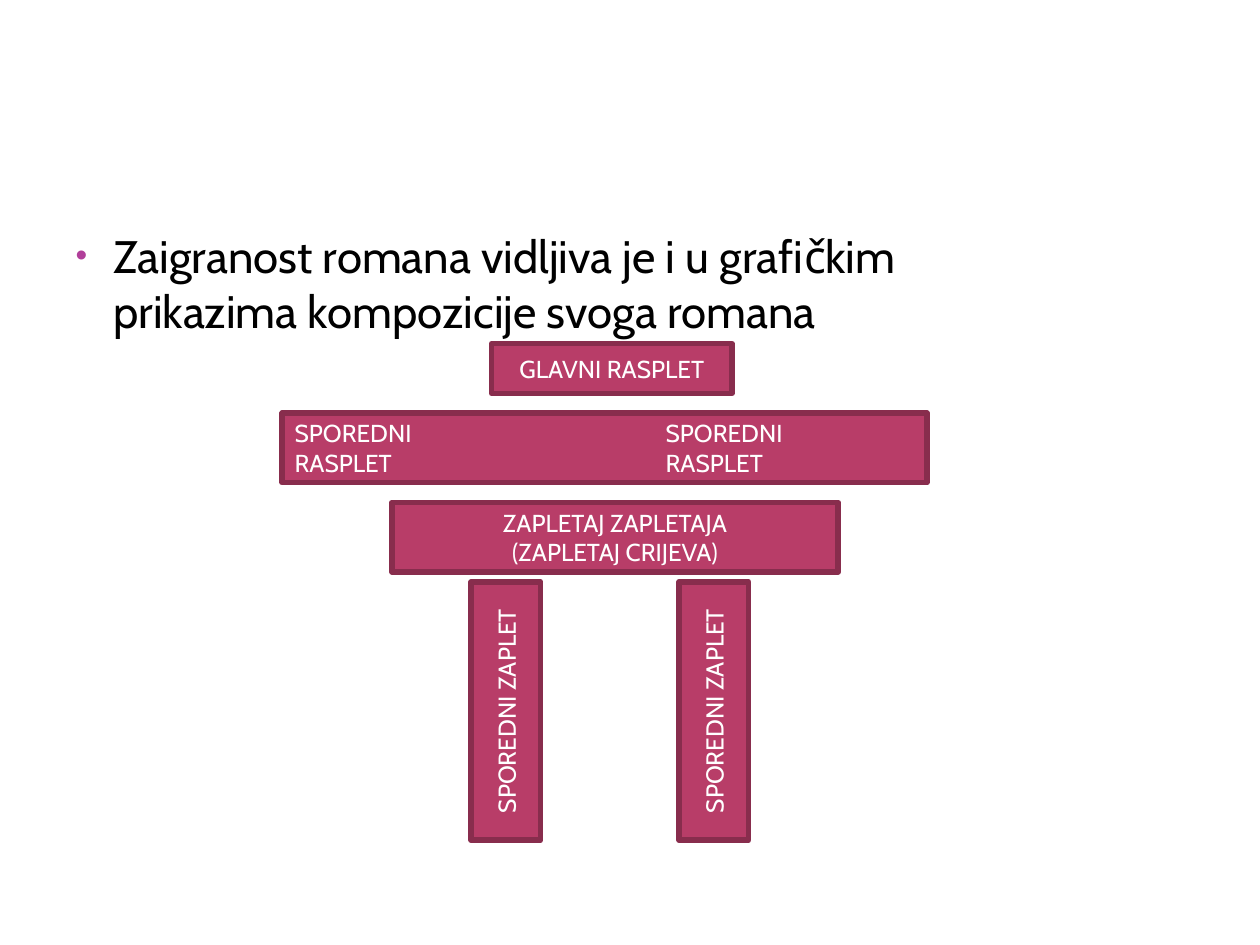
from lxml.etree import SubElement
from pptx import Presentation
from pptx.dml.color import RGBColor
from pptx.enum.shapes import MSO_SHAPE
from pptx.enum.text import MSO_ANCHOR, PP_ALIGN
from pptx.oxml.ns import qn
from pptx.util import Cm, Pt

FONT = "Cabin"
BLACK = RGBColor(0x00, 0x00, 0x00)
WHITE = RGBColor(0xFF, 0xFF, 0xFF)
RASPBERRY = RGBColor(0xB8, 0x3D, 0x68)
DARK_RASPBERRY = RGBColor(0x88, 0x2D, 0x4D)
BULLET_COLOR = RGBColor(0xB1, 0x3F, 0x9A)

STATEMENT = "Zaigranost romana vidljiva je i u grafičkim prikazima kompozicije svoga romana"
COLUMN_GAP = 7.48
LEG_TOP, LEG_WIDTH, LEG_HEIGHT = 11.73, 1.4, 5.21

# Lines of text, then left, top, width and height in centimetres
HORIZONTAL_BLOCKS = [
    (["GLAVNI RASPLET"], (9.91, 6.93, 4.85, 1)),
    (["SPOREDNI\tSPOREDNI", "RASPLET\tRASPLET"], (5.69, 8.33, 13, 1.4)),
    (["ZAPLETAJ ZAPLETAJA", "(ZAPLETAJ CRIJEVA)"], (7.9, 10.13, 9, 1.4)),
]
LEG_TEXT = "SPOREDNI ZAPLET"
LEG_LEFTS = [9.5, 13.69]


def add_run(paragraph, text, size, color):
    run = paragraph.add_run()
    run.text = text
    run.font.name = FONT
    run.font.size = Pt(size)
    run.font.color.rgb = color


def add_bullet(paragraph):
    properties = paragraph._p.get_or_add_pPr()
    properties.set("marL", str(Cm(0.76)))
    properties.set("indent", str(-Cm(0.76)))
    color = SubElement(properties, qn("a:buClr"))
    SubElement(color, qn("a:srgbClr"), val=str(BULLET_COLOR))
    SubElement(properties, qn("a:buSzPct"), val="73000")
    SubElement(properties, qn("a:buFont"), typeface="Arial")
    SubElement(properties, qn("a:buChar"), char="•")


def add_column_tab(paragraph):
    tabs = SubElement(paragraph._p.get_or_add_pPr(), qn("a:tabLst"))
    SubElement(tabs, qn("a:tab"), pos=str(Cm(COLUMN_GAP)), algn="l")


def add_block(slide, lines, box, upright=False):
    shape = slide.shapes.add_shape(MSO_SHAPE.RECTANGLE, *map(Cm, box))
    shape.shadow.inherit = False
    shape.fill.solid()
    shape.fill.fore_color.rgb = RASPBERRY
    shape.line.color.rgb = DARK_RASPBERRY
    shape.line.width = Pt(3.15)
    frame = shape.text_frame
    frame.word_wrap = True
    frame.vertical_anchor = MSO_ANCHOR.MIDDLE
    if upright:
        frame._txBody.bodyPr.set("vert", "vert270")
    for index, line in enumerate(lines):
        paragraph = frame.add_paragraph() if index else frame.paragraphs[0]
        paragraph.alignment = PP_ALIGN.CENTER
        if "\t" in line:
            paragraph.alignment = PP_ALIGN.LEFT
            add_column_tab(paragraph)
        add_run(paragraph, line, 14, WHITE)


def main():
    presentation = Presentation()
    presentation.slide_width, presentation.slide_height = Cm(25.4), Cm(19.05)
    slide = presentation.slides.add_slide(presentation.slide_layouts[1])
    title = slide.shapes.title
    title.element.getparent().remove(title.element)

    body = slide.placeholders[1]
    body.left, body.top, body.width, body.height = map(Cm, (1.27, 4.47, 20.12, 13.46))
    paragraph = body.text_frame.paragraphs[0]
    add_bullet(paragraph)
    paragraph.space_before = Pt(0)
    add_run(paragraph, STATEMENT, 26, BLACK)

    for lines, box in HORIZONTAL_BLOCKS:
        add_block(slide, lines, box)
    for left in LEG_LEFTS:
        add_block(slide, [LEG_TEXT], (left, LEG_TOP, LEG_WIDTH, LEG_HEIGHT), upright=True)

    presentation.save("out.pptx")


if __name__ == "__main__":
    main()
